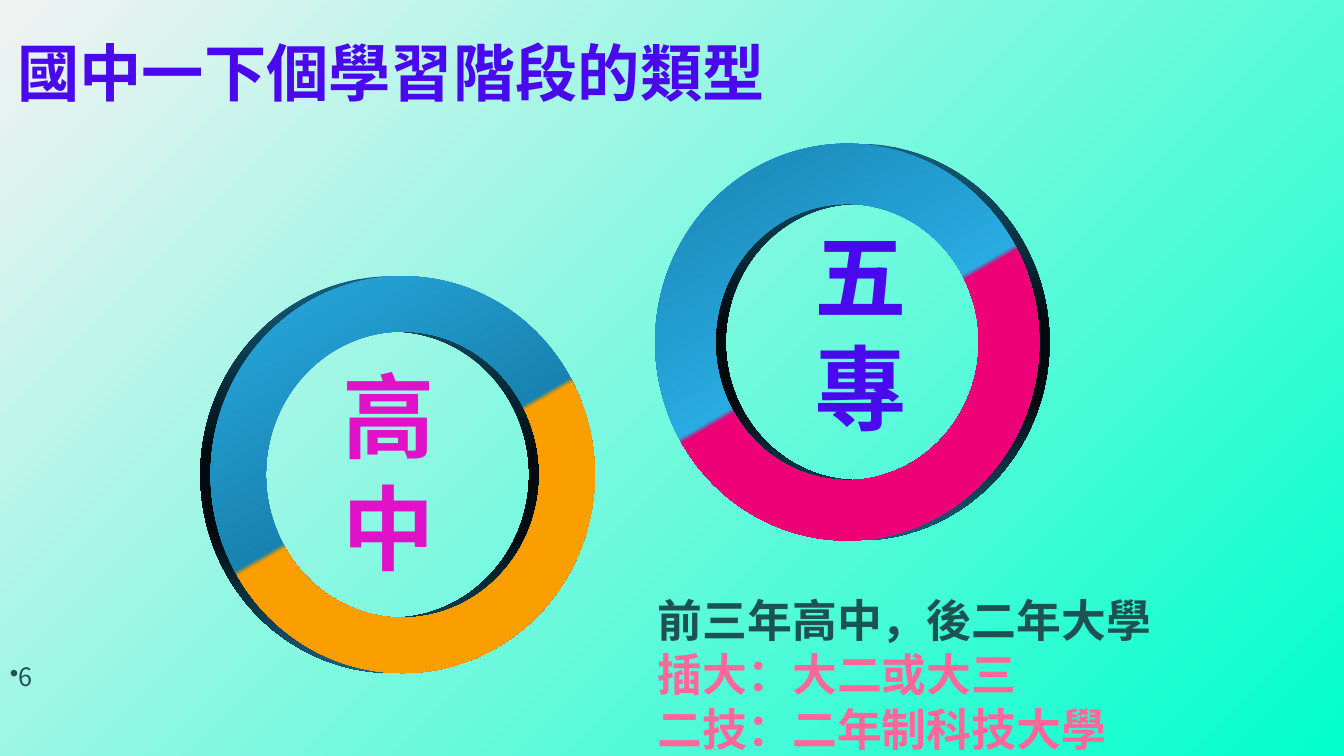
"""Build the slide on the two kinds of school that follow junior high."""
from dataclasses import dataclass

from lxml import etree
from pptx import Presentation
from pptx.dml.color import RGBColor
from pptx.enum.shapes import MSO_SHAPE
from pptx.enum.text import MSO_ANCHOR, PP_ALIGN
from pptx.oxml.ns import qn
from pptx.util import Cm, Pt

DONUT = MSO_SHAPE.DONUT
TOP, MIDDLE = MSO_ANCHOR.TOP, MSO_ANCHOR.MIDDLE
LEFT, CENTER = PP_ALIGN.LEFT, PP_ALIGN.CENTER
HEADING_FONT = "Noto Sans CJK SC"
NUMBER_FONT = "Noto Sans CJK TC"
VIOLET, MAGENTA, TEAL, PINK = "4A09ED", "E012C7", "1D5253", "FF6699"
BACKGROUND_STOPS = [(0, "F2F2F2"), (100, "00FFCC")]
RIM_STOPS = [(0, "17607F"), (45, "000A0F"), (65, "000A0F"), (100, "17607F")]
RING_WIDTH, RING_HEIGHT, RIM_DEPTH = 9.68, 10, 0.26


@dataclass
class Ring:
    """A two-coloured ring with a dark rim on one side."""
    left: float
    top: float
    thickness: float
    rim_side: int
    stops: list


@dataclass
class Label:
    """A block of text, given as lines of wording and colour."""
    box: tuple
    lines: list
    size: float
    line_height: float
    font: str = HEADING_FONT
    bold: bool = True
    anchor: MSO_ANCHOR = TOP
    alignment: PP_ALIGN = LEFT
    bullet: str = ""


RINGS = [
    Ring(5.31, 6.96, 0.144, -1,
         [(0, "29ABE2"), (50, "1883B0"), (51, "FB9E00"), (100, "FB9E00")]),
    Ring(16.51, 3.62, 0.157, 1,
         [(0, "1883B0"), (50, "29ABE2"), (51, "EE0076"), (100, "EE0076")]),
]
TITLE = Label((0, 0.56, 19.71, 2.64), [("國中一下個學習階段的類型", VIOLET)],
              44.5, 49, anchor=MIDDLE, alignment=CENTER)
LABELS = [
    Label((0, 16.71, 2.11, 0.64), [("6", TEAL)], 18, 22, NUMBER_FONT, False,
          MIDDLE, bullet="•"),
    Label((20.27, 5.36, 3.1, 5.89), [("五專", VIOLET)], 66, 80),
    Label((8.38, 8.89, 2.79, 5.89), [("高中", MAGENTA)], 66, 80),
    Label((16.33, 14.78, 13.49, 4.37),
          [("前三年高中，後二年大學", TEAL), ("插大：大二或大三", PINK),
           ("二技：二年制科技大學", PINK)], 32, 39),
]


def set_color(color_format, color: str) -> None:
    """Give a colour format a hex colour."""
    color_format.rgb = RGBColor.from_string(color)


def set_format(target, values: dict) -> None:
    """Set every named attribute on the target."""
    for name, value in values.items():
        setattr(target, name, value)


def fill_gradient(fill, owner, stops: list, angle: int) -> None:
    """Fill with a linear gradient whose angle runs clockwise."""
    fill.gradient()
    fill.gradient_angle = 360 - angle
    stop_list = owner.find(".//" + qn("a:gsLst"))
    for old_stop in list(stop_list):
        stop_list.remove(old_stop)
    for percent, color in stops:
        stop = etree.SubElement(stop_list, qn("a:gs"), pos=str(percent * 1000))
        etree.SubElement(stop, qn("a:srgbClr"), val=color)


def add_ring(slide, ring: Ring) -> None:
    """Draw the rim, then the face shifted against it."""
    rim_left = ring.left + ring.rim_side * RIM_DEPTH
    for left, stops, angle in ((rim_left, RIM_STOPS, 90),
                               (ring.left, ring.stops, 60)):
        shape = slide.shapes.add_shape(DONUT, Cm(left), Cm(ring.top),
                                       Cm(RING_WIDTH), Cm(RING_HEIGHT))
        shape.adjustments[0] = ring.thickness
        shape.shadow.inherit = False
        fill_gradient(shape.fill, shape._element, stops, angle)
        shape.line.fill.background()


def write_label(shape, label: Label) -> None:
    """Place a text shape and write its lines into one paragraph."""
    places = map(Cm, label.box)
    set_format(shape, dict(zip(("left", "top", "width", "height"), places)))
    set_format(shape.text_frame,
               {"word_wrap": True, "vertical_anchor": label.anchor})
    paragraph = shape.text_frame.paragraphs[0]
    set_format(paragraph, {"alignment": label.alignment, "space_before": Pt(0),
                           "line_spacing": Pt(label.line_height)})
    if label.bullet:
        properties = paragraph._p.get_or_add_pPr()
        etree.SubElement(properties, qn("a:buChar"), char=label.bullet)
    for index, (text, color) in enumerate(label.lines):
        if index:
            paragraph.add_line_break()
        run = paragraph.add_run()
        run.text = text
        set_format(run.font, {"size": Pt(label.size), "bold": label.bold,
                              "name": label.font})
        set_color(run.font.color, color)
        etree.SubElement(run._r.get_or_add_rPr(), qn("a:ea"),
                         typeface=label.font)


def main() -> None:
    """Build and save the presentation."""
    presentation = Presentation()
    set_format(presentation, {"slide_width": Cm(33.87),
                              "slide_height": Cm(19.05)})
    slide = presentation.slides.add_slide(presentation.slide_layouts[5])
    fill_gradient(slide.background.fill, slide._element, BACKGROUND_STOPS, 45)
    write_label(slide.shapes.title, TITLE)
    for ring in RINGS:
        add_ring(slide, ring)
    for label in LABELS:
        write_label(slide.shapes.add_textbox(*map(Cm, label.box)), label)
    presentation.save("out.pptx")


if __name__ == "__main__":
    main()
